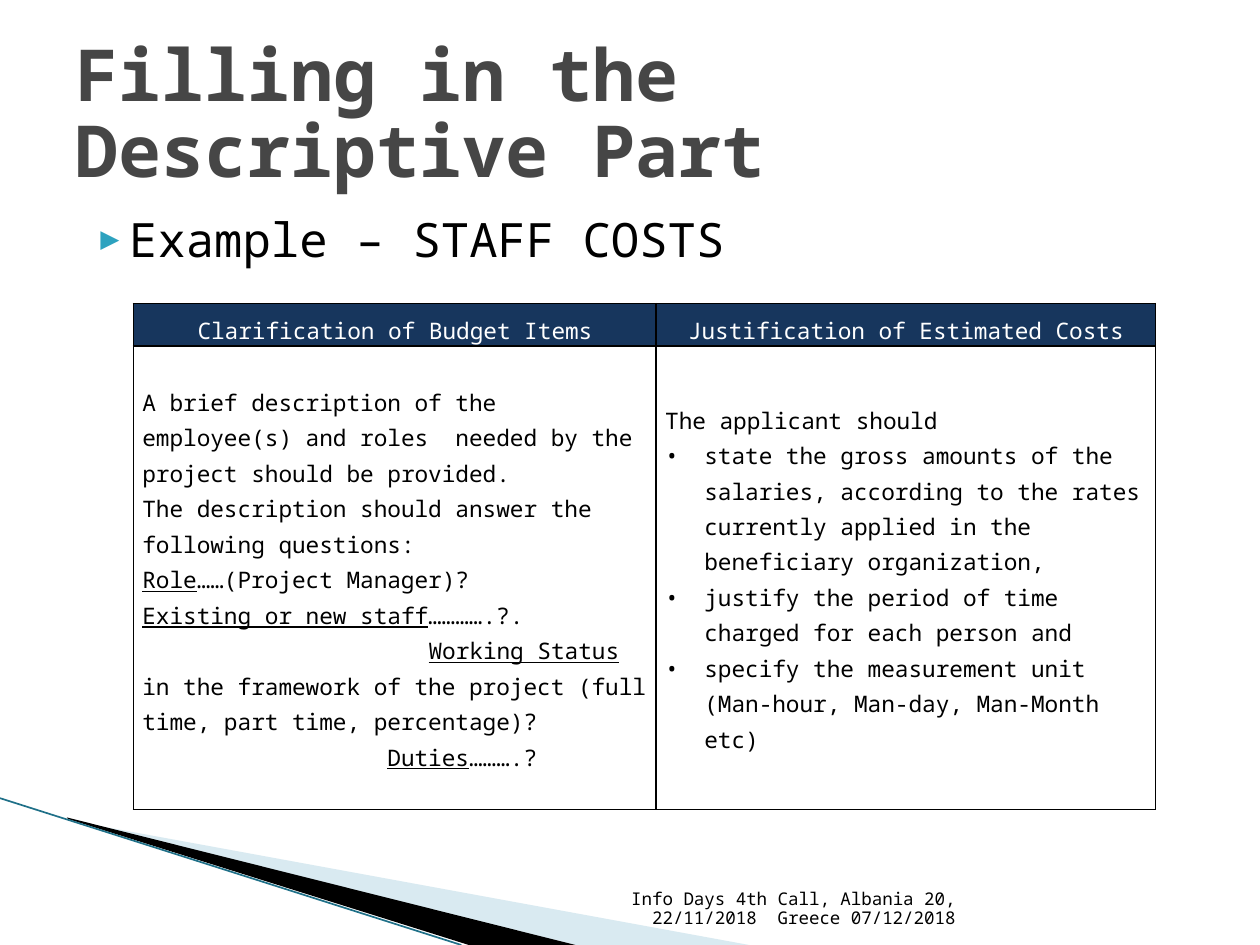
"""Build the staff costs example slide with its two-column guidance table."""
from lxml.etree import SubElement
from pptx import Presentation
from pptx.dml.color import RGBColor
from pptx.enum.text import MSO_ANCHOR as Anchor, MSO_AUTO_SIZE as AutoSize, PP_ALIGN as Align
from pptx.oxml.ns import qn
from pptx.util import Cm, Pt

FONT = "Noto Sans Mono"
COLORS = {"title": "464646", "text": "000000", "white": "FFFFFF", "header": "17365D",
          "bullet": "2DA2BF", "pale": "A0CBDC", "line": "1F7088"}


def write(paragraph, runs, size, color="text", bold=False):
    for text, underlined in runs:
        run = paragraph.add_run()
        run.text = text
        run.font.name = FONT
        run.font.size = Pt(size)
        run.font.bold = bold
        run.font.underline = underlined
        run.font.color.rgb = RGBColor.from_string(COLORS[color])


def indent(paragraph, left, first, bullet=None, color="text", percent=100):
    properties = paragraph._p.get_or_add_pPr()
    properties.set("marL", str(Cm(left)))
    properties.set("indent", str(Cm(first)))
    if bullet:
        SubElement(SubElement(properties, qn("a:buClr")), qn("a:srgbClr"), val=COLORS[color])
        SubElement(properties, qn("a:buSzPct"), val=str(percent * 1000))
        SubElement(properties, qn("a:buFont"), typeface=FONT)
        SubElement(properties, qn("a:buChar"), char=bullet)


presentation = Presentation()
presentation.slide_width, presentation.slide_height = Cm(25.4), Cm(19.05)
slide = presentation.slides.add_slide(presentation.slide_layouts[5])
shapes = slide.shapes

wedges = [
    ("pale", 40, [(1.4, 16.54), (15.1, 19.05), (11.6, 19.05), (1.4, 16.51)]),
    ("text", 100, [(1.35, 16.48), (11.6, 19.05), (9.45, 19.05), (1.37, 16.51)]),
]
for color, opacity, points in wedges:
    corners = [(Cm(x), Cm(y)) for x, y in points]
    builder = shapes.build_freeform(*corners[0])
    builder.add_line_segments(corners[1:], close=True)
    wedge = builder.convert_to_shape()
    wedge.shadow.inherit = False
    wedge.line.fill.background()
    wedge.fill.solid()
    wedge.fill.fore_color.rgb = RGBColor.from_string(COLORS[color])
    if opacity < 100:
        fill_color = wedge._element.spPr.find(qn("a:solidFill")).find(qn("a:srgbClr"))
        SubElement(fill_color, qn("a:alpha"), val=str(opacity * 1000))

edge = shapes.add_connector(1, Cm(0), Cm(16.09), Cm(9.3), Cm(19.05))
edge.line.color.rgb = RGBColor.from_string(COLORS["line"])
edge.line.width = Pt(0.95)
SubElement(edge._element.spPr, qn("a:effectLst"))

title = shapes.title
title.left, title.top, title.width, title.height = Cm(1.27), Cm(0.76), Cm(22.86), Cm(3.18)
title.text_frame.auto_size = AutoSize.NONE
title.text_frame.vertical_anchor = Anchor.MIDDLE
paragraph = title.text_frame.paragraphs[0]
paragraph.alignment = Align.LEFT
paragraph.line_spacing = 0.88
write(paragraph, [("Filling in the Descriptive Part", False)], 41, "title", bold=True)

example = shapes.add_textbox(Cm(1.27), Cm(4.11), Cm(22.86), Cm(1.6))
example.text_frame.word_wrap = True
paragraph = example.text_frame.paragraphs[0]
indent(paragraph, 1.02, -0.71, "▶", "bullet", 68)
write(paragraph, [("Example – STAFF COSTS", False)], 27)

footer = shapes.add_textbox(Cm(11.51), Cm(17.81), Cm(8), Cm(1.02))
footer.text_frame.word_wrap = True
footer.text_frame.vertical_anchor = Anchor.BOTTOM
paragraph = footer.text_frame.paragraphs[0]
paragraph.alignment = Align.RIGHT
paragraph.line_spacing = 0.88
write(paragraph, [("Info Days 4th Call, Albania 20, 22/11/2018  Greece 07/12/2018", False)], 10)

PLAIN, BULLET = (0, 0, None), (0.79, -0.79, "•")
rows = [
    [
        [(PLAIN, [("Clarification of Budget Items", False)])],
        [(PLAIN, [("Justification of Estimated Costs", False)])],
    ],
    [
        [
            (PLAIN, [("A brief description of the employee(s) and roles  needed by the "
                      "project should be provided.", False)]),
            (PLAIN, [("The description should answer the following questions:", False)]),
            (PLAIN, [("Role", True), ("……(Project Manager)?", False)]),
            (PLAIN, [("Existing or new staff", True), ("………….?.", False)]),
            ((0, 5.77, None), [("Working Status ", True),
                               ("in the framework of the project (full time, part time, "
                                "percentage)?", False)]),
            ((0, 4.94, None), [("Duties", True), ("……….?", False)]),
        ],
        [
            (PLAIN, [("The applicant should", False)]),
            (BULLET, [("state the gross amounts of the salaries, according to the rates "
                       "currently applied in the beneficiary organization,", False)]),
            (BULLET, [("justify the period of time charged for each person and", False)]),
            (BULLET, [("specify the measurement unit (Man-hour, Man-day, Man-Month etc)",
                       False)]),
        ],
    ],
]
table = shapes.add_table(2, 2, Cm(2.69), Cm(6.12), Cm(20.6), Cm(10.2)).table
table.first_row = table.horz_banding = False
table.columns[0].width, table.columns[1].width = Cm(10.54), Cm(10.06)
table.rows[0].height, table.rows[1].height = Cm(0.85), Cm(9.35)

for row_index, row in enumerate(rows):
    is_header = row_index == 0
    for column_index, content in enumerate(row):
        cell = table.cell(row_index, column_index)
        cell.margin_left = cell.margin_right = Cm(0.18)
        cell.margin_top = cell.margin_bottom = 0
        cell.vertical_anchor = Anchor.BOTTOM if is_header else Anchor.MIDDLE
        for side in ("lnL", "lnR", "lnT", "lnB"):
            border = SubElement(cell._tc.get_or_add_tcPr(), qn(f"a:{side}"), w=str(Pt(1)))
            border_fill = SubElement(border, qn("a:solidFill"))
            SubElement(border_fill, qn("a:srgbClr"), val=COLORS["text"])
        cell.fill.solid()
        cell.fill.fore_color.rgb = RGBColor.from_string(COLORS["header" if is_header else "white"])
        for index, (layout, runs) in enumerate(content):
            frame = cell.text_frame
            paragraph = frame.add_paragraph() if index else frame.paragraphs[0]
            indent(paragraph, *layout)
            paragraph.alignment = Align.CENTER if is_header else Align.LEFT
            paragraph.line_spacing = 1.15
            write(paragraph, runs, 13, "white" if is_header else "text")

presentation.save("out.pptx")
